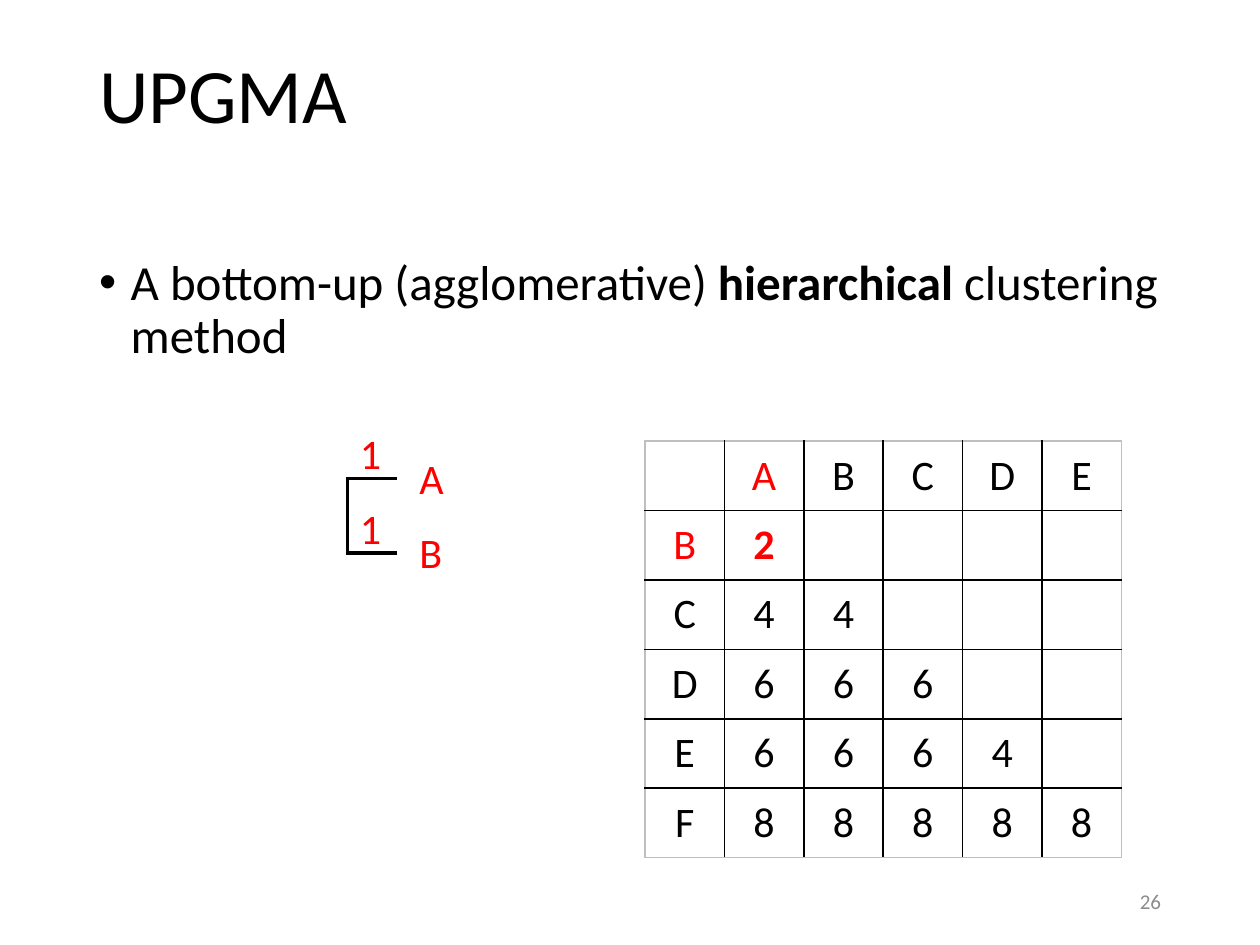
from dataclasses import dataclass

from lxml.etree import SubElement
from pptx import Presentation
from pptx.dml.color import RGBColor as RGB
from pptx.enum.shapes import MSO_CONNECTOR as Connector
from pptx.enum.text import MSO_ANCHOR as Anchor, MSO_AUTO_SIZE as AutoSize, PP_ALIGN as Align
from pptx.oxml.ns import qn
from pptx.util import Pt


@dataclass(frozen=True)
class Theme:
    font: str = "Calibri"
    black: RGB = RGB(0, 0, 0)
    red: RGB = RGB(255, 0, 0)
    grey: RGB = RGB(0x8C, 0x8C, 0x8C)
    frame: RGB = RGB(0xBF, 0xBF, 0xBF)
    title: float = 44
    body: float = 28
    label: float = 24
    footer: float = 12


@dataclass(frozen=True)
class Box:
    x: float
    y: float
    w: float
    h: float

    def lengths(self) -> tuple:
        return Pt(self.x), Pt(self.y), Pt(self.w), Pt(self.h)


@dataclass(frozen=True)
class Branch:
    name: str
    length: str
    y: float


T = Theme()
TITLE_BOX = Box(49.5, 28.75, 621, 104.4)
BODY_BOX = Box(49.5, 143.75, 621, 342.6)
NUMBER_BOX = Box(508.5, 500.5, 162, 28.75)

# Tree: branches run right from a common stem
STEM_X, TIP_X, LABEL_X = 198.5, 226.9, 232.5
BRANCHES = [Branch("A", "1", 273.4), Branch("B", "1", 316.1)]

# Lower triangle of the distance matrix
TABLE_X, TABLE_Y, COL_W, ROW_H = 368.6, 252, 45.36, 39.7
COLUMNS = "ABCDE"
DISTANCES = {"B": "2", "C": "44", "D": "666", "E": "6664", "F": "88888"}
CLOSEST = {(0, 1), (1, 0), (1, 1)}


def style(p, size: float, color: RGB) -> None:
    for r in p.runs:
        r.font.name, r.font.size = T.font, Pt(size)
        r.font.color.rgb = color


def place(sp, box: Box) -> None:
    sp.left, sp.top, sp.width, sp.height = box.lengths()
    sp.text_frame.auto_size = AutoSize.NONE
    sp.text_frame.vertical_anchor = Anchor.TOP


def add_label(shapes, text: str, x: float, y: float) -> None:
    tf = shapes.add_textbox(*Box(x, y, 27, 36).lengths()).text_frame
    tf.word_wrap = False
    tf.auto_size = AutoSize.SHAPE_TO_FIT_TEXT
    tf.text = text
    style(tf.paragraphs[0], T.label, T.red)


def add_line(shapes, x1: float, y1: float, x2: float, y2: float) -> None:
    line = shapes.add_connector(Connector.STRAIGHT, Pt(x1), Pt(y1), Pt(x2), Pt(y2))
    line.line.color.rgb = T.black
    line.line.width = Pt(2)
    SubElement(line._element.spPr, qn("a:effectLst"))


def set_borders(cell, row: int, col: int, last: int) -> None:
    outer = {"lnL": col == 0, "lnR": col == last, "lnT": row == 0, "lnB": row == last}
    for tag, on_frame in outer.items():
        ln = SubElement(cell._tc.get_or_add_tcPr(), qn(f"a:{tag}"), w=str(Pt(1)))
        fill = SubElement(ln, qn("a:solidFill"))
        SubElement(fill, qn("a:srgbClr"), val=str(T.frame if on_frame else T.black))


def add_title(s) -> None:
    sp = s.shapes.title
    place(sp, TITLE_BOX)
    sp.text_frame.text = "UPGMA"
    p = sp.text_frame.paragraphs[0]
    p.alignment, p.line_spacing = Align.LEFT, 0.9
    style(p, T.title, T.black)


def add_body(s) -> None:
    sp = s.placeholders[1]
    place(sp, BODY_BOX)
    p = sp.text_frame.paragraphs[0]
    for text in ("A bottom-up (agglomerative) ", "hierarchical ", "clustering method"):
        p.add_run().text = text
    style(p, T.body, T.black)
    p.runs[1].font.bold = True
    p.line_spacing, p.space_before = 0.9, Pt(10)
    pPr = p._p.get_or_add_pPr()
    pPr.set("marL", str(Pt(18)))
    pPr.set("indent", str(-Pt(18)))


def add_number(s) -> None:
    tf = s.shapes.add_textbox(*NUMBER_BOX.lengths()).text_frame
    tf.word_wrap = True
    tf.vertical_anchor = Anchor.MIDDLE
    tf.text = "26"
    tf.paragraphs[0].alignment = Align.RIGHT
    style(tf.paragraphs[0], T.footer, T.grey)


def add_tree(s) -> None:
    shapes = s.shapes.add_group_shape().shapes
    for b in BRANCHES:
        add_label(shapes, b.name, LABEL_X, b.y - 18.5)
        add_label(shapes, b.length, STEM_X, b.y - 32.4)
        add_line(shapes, STEM_X, b.y, TIP_X, b.y)
    add_line(shapes, STEM_X, BRANCHES[0].y - 1, STEM_X, BRANCHES[-1].y + 1)


def add_matrix(s) -> None:
    rows = [" " + COLUMNS] + [name + values for name, values in DISTANCES.items()]
    n = len(rows)
    box = Box(TABLE_X, TABLE_Y, n * COL_W, n * ROW_H)
    table = s.shapes.add_table(n, n, *box.lengths()).table
    table.first_row = table.horz_banding = False
    for i, row in enumerate(rows):
        for j, text in enumerate(row.ljust(n)):
            cell = table.cell(i, j)
            set_borders(cell, i, j, n - 1)
            cell.fill.background()
            cell.vertical_anchor = Anchor.MIDDLE
            cell.text = text.strip()
            p = cell.text_frame.paragraphs[0]
            p.alignment = Align.CENTER
            style(p, T.label, T.red if (i, j) in CLOSEST else T.black)
            p.font.bold = (i, j) == (1, 1)
            for r in p.runs:
                r.font.bold = (i, j) == (1, 1)


def main() -> None:
    prs = Presentation()
    prs.slide_width, prs.slide_height = Pt(720), Pt(540)
    s = prs.slides.add_slide(prs.slide_layouts[1])
    add_title(s)
    add_body(s)
    add_number(s)
    add_tree(s)
    add_matrix(s)
    prs.save("out.pptx")


if __name__ == "__main__":
    main()
